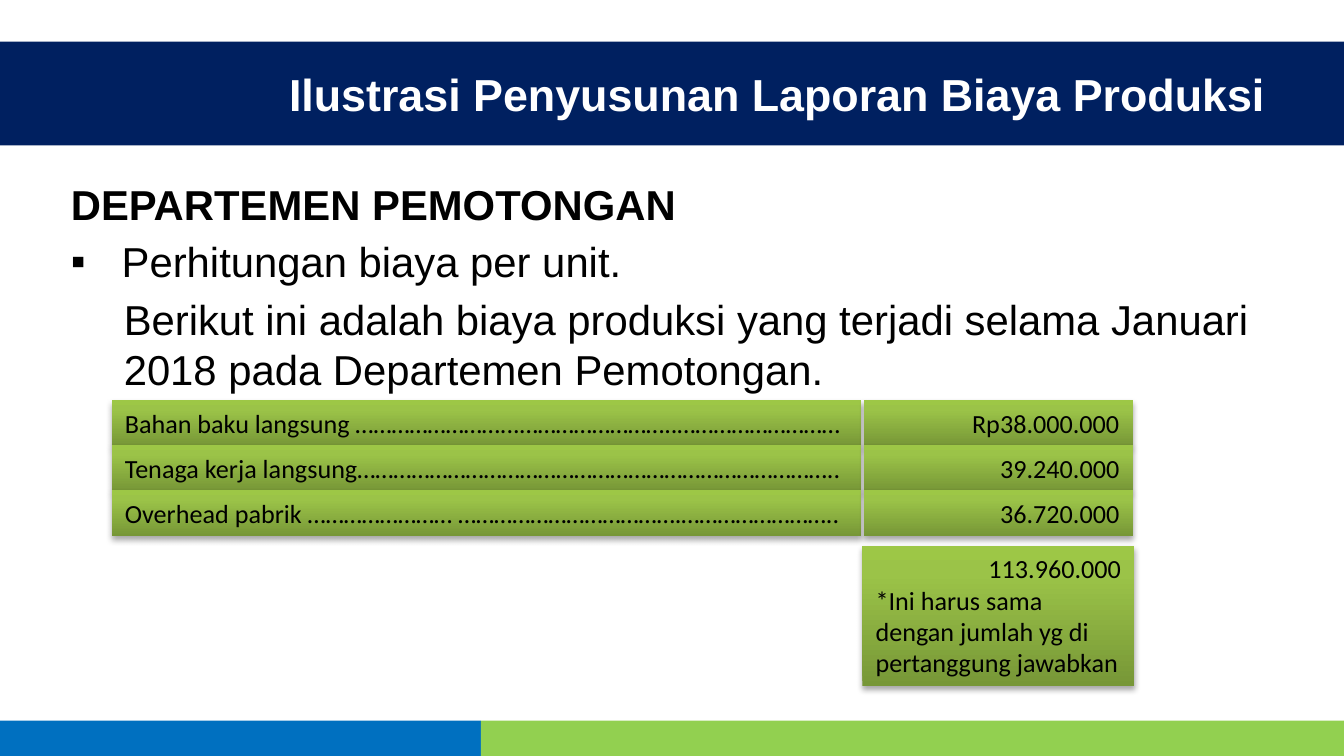
import pptx
import pptx.util
import pptx.dml.color
import pptx.enum.shapes
import pptx.enum.text
import pptx.oxml
import pptx.oxml.ns
from pptx.util import Cm

COLOURS = {
    "navy": "002060", "blue": "0070C0", "lime": "92D050", "white": "FFFFFF",
    "black": "000000", "green_dark": "779737", "green_mid": "9BC348", "green_light": "9DC746",
}
ALIGN = pptx.enum.text.PP_ALIGN
ANCHOR = pptx.enum.text.MSO_ANCHOR
HEADING = {"size": 24, "name": "Arial", "bold": True, "color": "white"}
BODY = {"size": 22.4, "name": "Arial", "bold": False, "color": "black"}
CELL = {"size": 14, "name": "Calibri", "bold": False, "color": "black"}
A_NS = pptx.oxml.ns.nsdecls("a")

COSTS = [
    ("Bahan baku langsung ……………………...……………………..………………………", "Rp38.000.000"),
    ("Tenaga kerja langsung……………………………………………………………………..", "39.240.000"),
    ("Overhead pabrik …………………… ……………………………….……………………..", "36.720.000"),
]
TOTAL = [
    ("113.960.000", ALIGN.RIGHT),
    ("*Ini harus sama dengan jumlah yg di pertanggung jawabkan", ALIGN.LEFT),
]


def rgb(key):
    return pptx.dml.color.RGBColor.from_string(COLOURS[key])


def set_font(paragraph, values):
    for attribute, value in values.items():
        if attribute == "color":
            paragraph.font.color.rgb = rgb(value)
        elif attribute == "size":
            paragraph.font.size = pptx.util.Pt(value)
        else:
            setattr(paragraph.font, attribute, value)


def add_block(slide, left, top, width, height):
    """Add a rectangle without outline or inherited shadow."""
    block = slide.shapes.add_shape(
        pptx.enum.shapes.MSO_SHAPE.RECTANGLE, Cm(left), Cm(top), Cm(width), Cm(height))
    block.line.fill.background()
    block.shadow.inherit = False
    return block


def add_band(slide, left, top, width, height, colour):
    band = add_block(slide, left, top, width, height)
    band.fill.solid()
    band.fill.fore_color.rgb = rgb(colour)


def add_green_cell(slide, left, top, width, height, lines):
    """Add a shaded cell; lines holds (text, alignment) pairs."""
    cell = add_block(slide, left, top, width, height)
    cell.fill.gradient()
    cell.fill.gradient_angle = 90
    properties = cell._element.spPr
    stops = properties.find(".//" + pptx.oxml.ns.qn("a:gsLst"))
    for stop in list(stops):
        stops.remove(stop)
    for position, key in ((0, "green_dark"), (80, "green_mid"), (100, "green_light")):
        stops.append(pptx.oxml.parse_xml(
            f'<a:gs {A_NS} pos="{position * 1000}"><a:srgbClr val="{COLOURS[key]}"/></a:gs>'))
    properties.find(pptx.oxml.ns.qn("a:effectLst")).append(pptx.oxml.parse_xml(
        f'<a:outerShdw {A_NS} blurRad="40000" dist="23000" dir="5400000" rotWithShape="0">'
        f'<a:srgbClr val="{COLOURS["black"]}"><a:alpha val="35000"/></a:srgbClr></a:outerShdw>'))

    frame = cell.text_frame
    frame.word_wrap = True
    frame.vertical_anchor = ANCHOR.TOP
    for index, (text, alignment) in enumerate(lines):
        paragraph = frame.add_paragraph() if index else frame.paragraphs[0]
        paragraph.text = text
        paragraph.alignment = alignment
        set_font(paragraph, CELL)


def place_heading(slide, left, top, width, height):
    add_band(slide, left, top, width, height, "navy")
    heading = slide.shapes.title
    slide.shapes._spTree.append(heading._element)  # bring in front of the band
    inset_left, inset_right = 4.22, 1.24
    heading.left, heading.top = Cm(left + inset_left), Cm(top)
    heading.width, heading.height = Cm(width - inset_left - inset_right), Cm(height)
    heading.text_frame.vertical_anchor = ANCHOR.MIDDLE
    paragraph = heading.text_frame.paragraphs[0]
    paragraph.text = "Ilustrasi Penyusunan Laporan Biaya Produksi"
    paragraph.alignment = ALIGN.RIGHT
    set_font(paragraph, HEADING)


def place_explanation(slide, left, top, width, height):
    frame = slide.shapes.add_textbox(Cm(left), Cm(top), Cm(width), Cm(height)).text_frame
    frame.word_wrap = True
    paragraphs = [
        ("DEPARTEMEN PEMOTONGAN", 0, 0, None, True),
        ("Perhitungan biaya per unit.", 0.96, -0.96, "▪", False),
        ("Berikut ini adalah biaya produksi yang terjadi selama Januari 2018 "
         "pada Departemen Pemotongan.", 1, 0, None, False),
    ]
    for index, (text, margin, indent, bullet, bold) in enumerate(paragraphs):
        paragraph = frame.add_paragraph() if index else frame.paragraphs[0]
        paragraph.text = text
        if index:
            paragraph.space_before = pptx.util.Pt(4)
        settings = paragraph._p.get_or_add_pPr()
        settings.set("marL", str(Cm(margin)))
        settings.set("indent", str(Cm(indent)))
        if bullet:
            settings.append(pptx.oxml.parse_xml(f'<a:buFont {A_NS} typeface="Arial"/>'))
            settings.append(pptx.oxml.parse_xml(f'<a:buChar {A_NS} char="{bullet}"/>'))
        set_font(paragraph, {**BODY, "bold": bold})


def place_costs(slide, left, top, width):
    """Stack the cost rows and set the total below the amount column."""
    label_width, gap, row_height, pitch = 14.17, 0.05, 0.86, 0.85
    amount_left = left + label_width + gap
    amount_width = width - label_width - gap
    for row, (label, amount) in enumerate(COSTS):
        row_top = top + row * pitch
        add_green_cell(slide, left, row_top, label_width, row_height, [(label, ALIGN.LEFT)])
        add_green_cell(slide, amount_left, row_top, amount_width, row_height,
                       [(amount, ALIGN.RIGHT)])
    add_green_cell(slide, amount_left - 0.03, top + 2.75, amount_width + 0.06, 2.65, TOTAL)


def place_footer(slide, left, top, width, height):
    blue_width = 9.09
    add_band(slide, left, top, blue_width, height, "blue")
    add_band(slide, left + blue_width, top, width - blue_width, height, "lime")


def main():
    deck = pptx.Presentation()
    deck.slide_width, deck.slide_height = Cm(25.4), Cm(14.29)
    slide = deck.slides.add_slide(deck.slide_layouts[5])
    place_footer(slide, 0, 13.62, 25.4, 0.67)
    place_heading(slide, 0, 0.79, 25.4, 1.96)
    place_explanation(slide, 1.09, 3.25, 23.06, 4.32)
    place_costs(slide, 2.11, 7.57, 19.3)
    deck.save("out.pptx")


if __name__ == "__main__":
    main()
